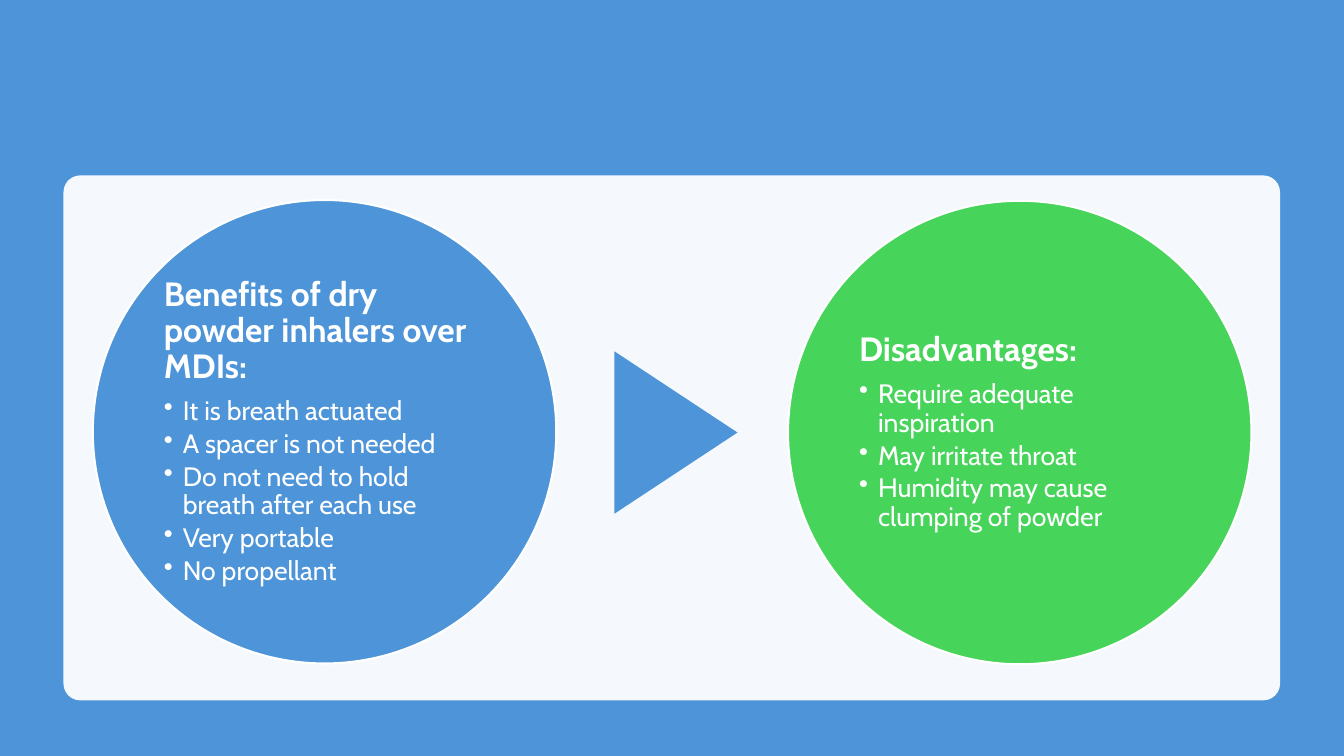
import pptx
import pptx.util
import pptx.dml.color
import pptx.enum.shapes
import pptx.enum.text
from dataclasses import dataclass
from lxml import etree

Cm, Pt = pptx.util.Cm, pptx.util.Pt
Kind = pptx.enum.shapes.MSO_SHAPE


@dataclass(frozen=True)
class Theme:
    blue: str = "4D94D8"
    green: str = "47D45A"
    white: str = "FFFFFF"
    font: str = "Cabin"
    head: int = 24
    item: int = 19


theme = Theme()
rgb = pptx.dml.color.RGBColor.from_string

deck = pptx.Presentation()
deck.slide_width, deck.slide_height = Cm(33.87), Cm(19.05)
slide = deck.slides.add_slide(deck.slide_layouts[6])


def draw(kind, left, top, width, height, color):
    """Add a borderless, shadowless shape; lengths in centimetres."""
    shape = slide.shapes.add_shape(kind, Cm(left), Cm(top), Cm(width), Cm(height))
    shape.shadow.inherit = False
    shape.fill.solid()
    shape.fill.fore_color.rgb = rgb(color)
    shape.line.fill.background()
    return shape


def write(para, text, size, after):
    para.text = text
    para.line_spacing = 0.9
    para.space_after = Pt(after)
    para.font.name = theme.font
    para.font.size = Pt(size)
    para.font.color.rgb = rgb(theme.white)


draw(Kind.RECTANGLE, 0, 0, 33.87, 19.05, theme.blue)

panel = draw(Kind.ROUNDED_RECTANGLE, 1.6, 4.42, 30.66, 13.23, theme.white)
panel.adjustments[0] = 0.032
tint = panel.fill._xPr.find(".//" + pptx.oxml.ns.qn("a:srgbClr"))
etree.SubElement(tint, pptx.oxml.ns.qn("a:alpha"), val="95000")

arrow = draw(Kind.ISOSCELES_TRIANGLE, 14.99, 9.35, 4.09, 3.1, theme.blue)
arrow.rotation = 90

size, inset = 11.68, 1.71
groups = [
    (2.34, 5.04, theme.blue, "Benefits of dry powder inhalers over MDIs:",
     ["It is breath actuated", "A spacer is not needed",
      "Do not need to hold breath after each use",
      "Very portable", "No propellant"]),
    (19.86, 5.06, theme.green, "Disadvantages:",
     ["Require adequate inspiration", "May irritate throat",
      "Humidity may cause clumping of powder"]),
]

for left, top, color, title, items in groups:
    disc = draw(Kind.OVAL, left, top, size, size, color)
    disc.line.color.rgb = rgb(theme.white)
    disc.line.width = Pt(1.5)

    side = Cm(size - 2 * inset)
    box = slide.shapes.add_textbox(Cm(left + inset), Cm(top + inset), side, side)
    frame = box.text_frame
    frame.word_wrap = True
    frame.vertical_anchor = pptx.enum.text.MSO_ANCHOR.MIDDLE
    frame.margin_left = frame.margin_right = Cm(0.08)
    frame.margin_top = frame.margin_bottom = Cm(0.08)

    head = frame.paragraphs[0]
    write(head, title, theme.head, 8.4)
    head.font.bold = True
    for item in items:
        para = frame.add_paragraph()
        write(para, item, theme.item, 2.85)
        para.level = 1
        props = para._p.get_or_add_pPr()
        props.set("marL", str(Cm(0.48)))
        props.set("indent", str(-Cm(0.48)))
        bullet = etree.Element(pptx.oxml.ns.qn("a:buChar"), char="•")
        props.find(pptx.oxml.ns.qn("a:defRPr")).addprevious(bullet)

deck.save("out.pptx")
